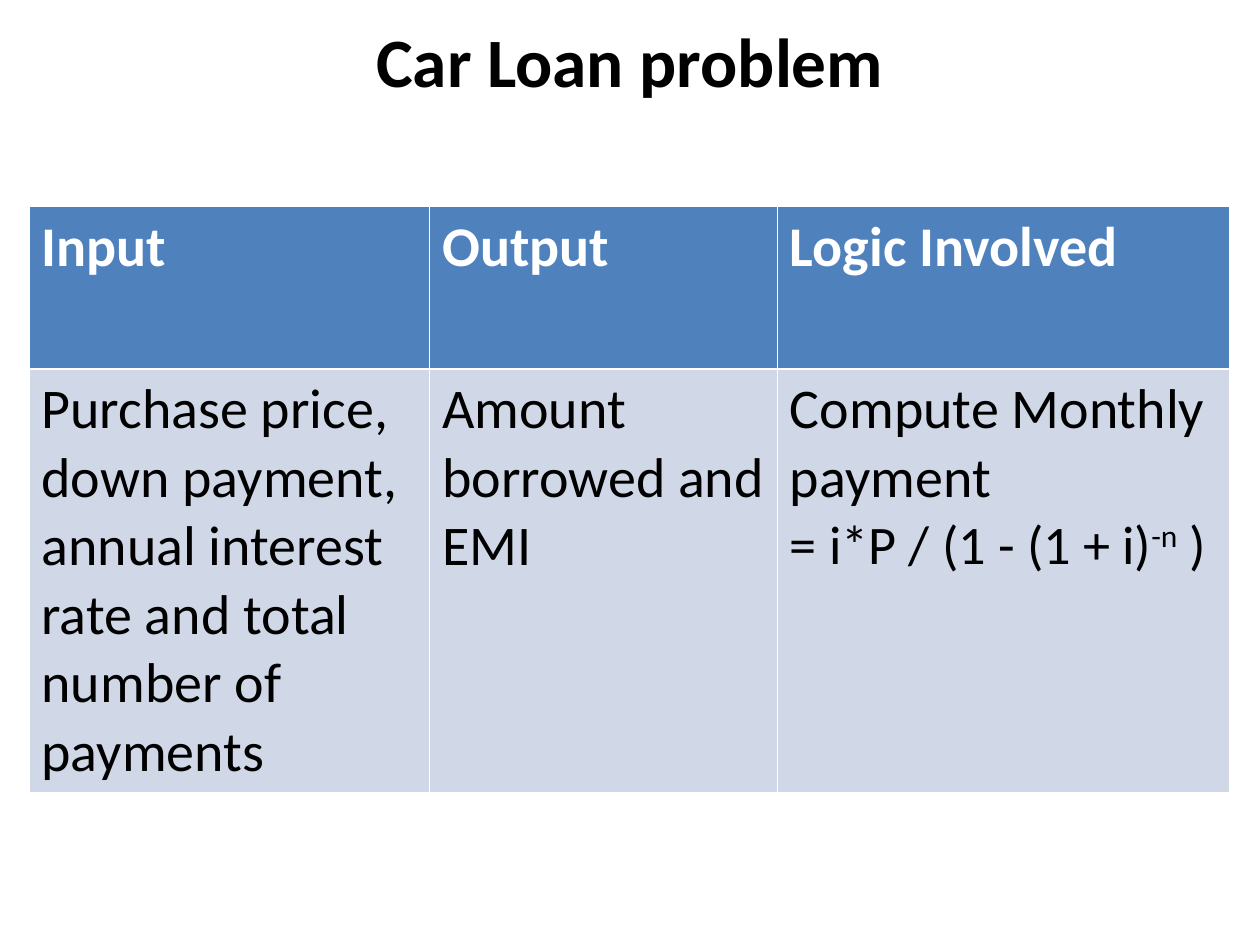
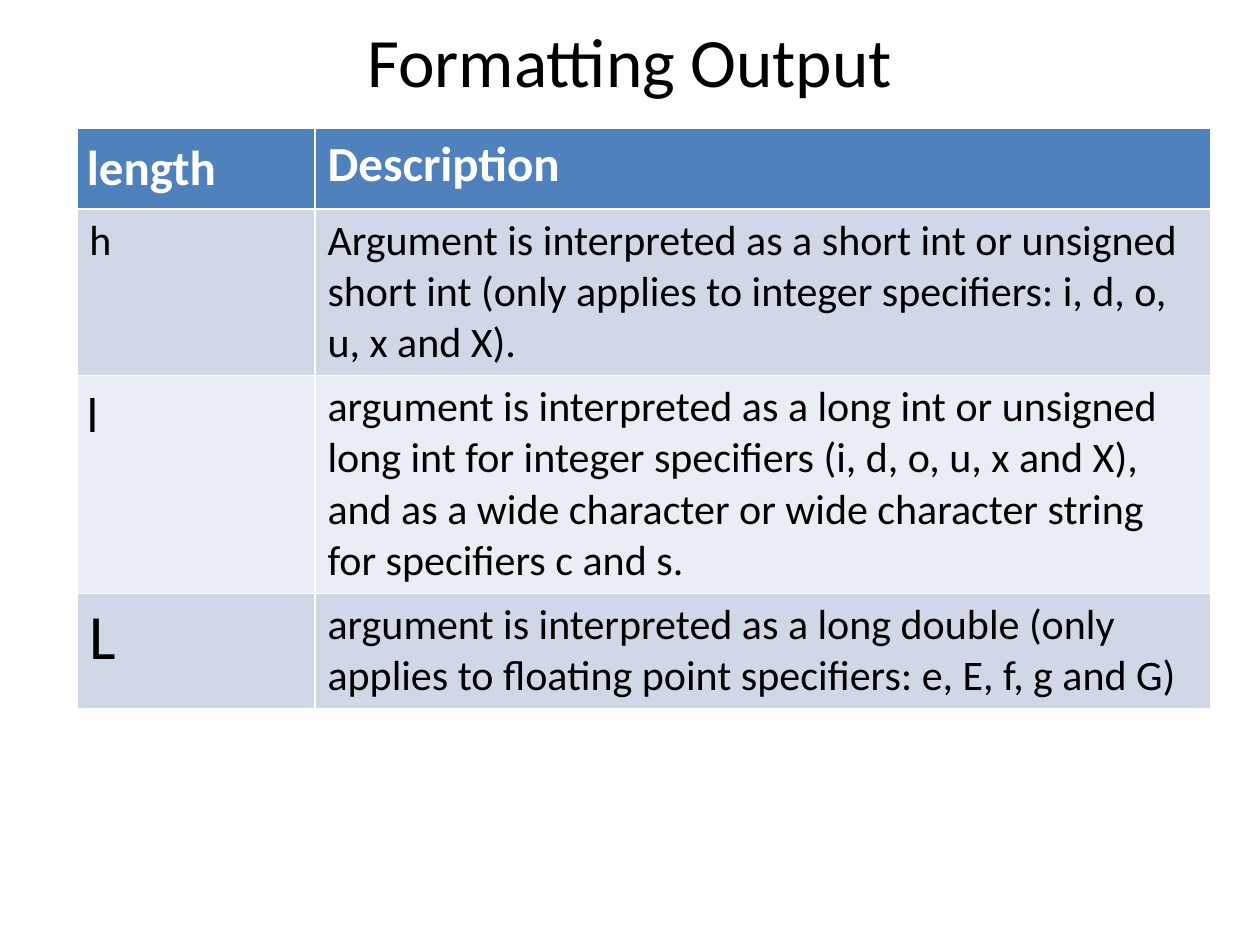
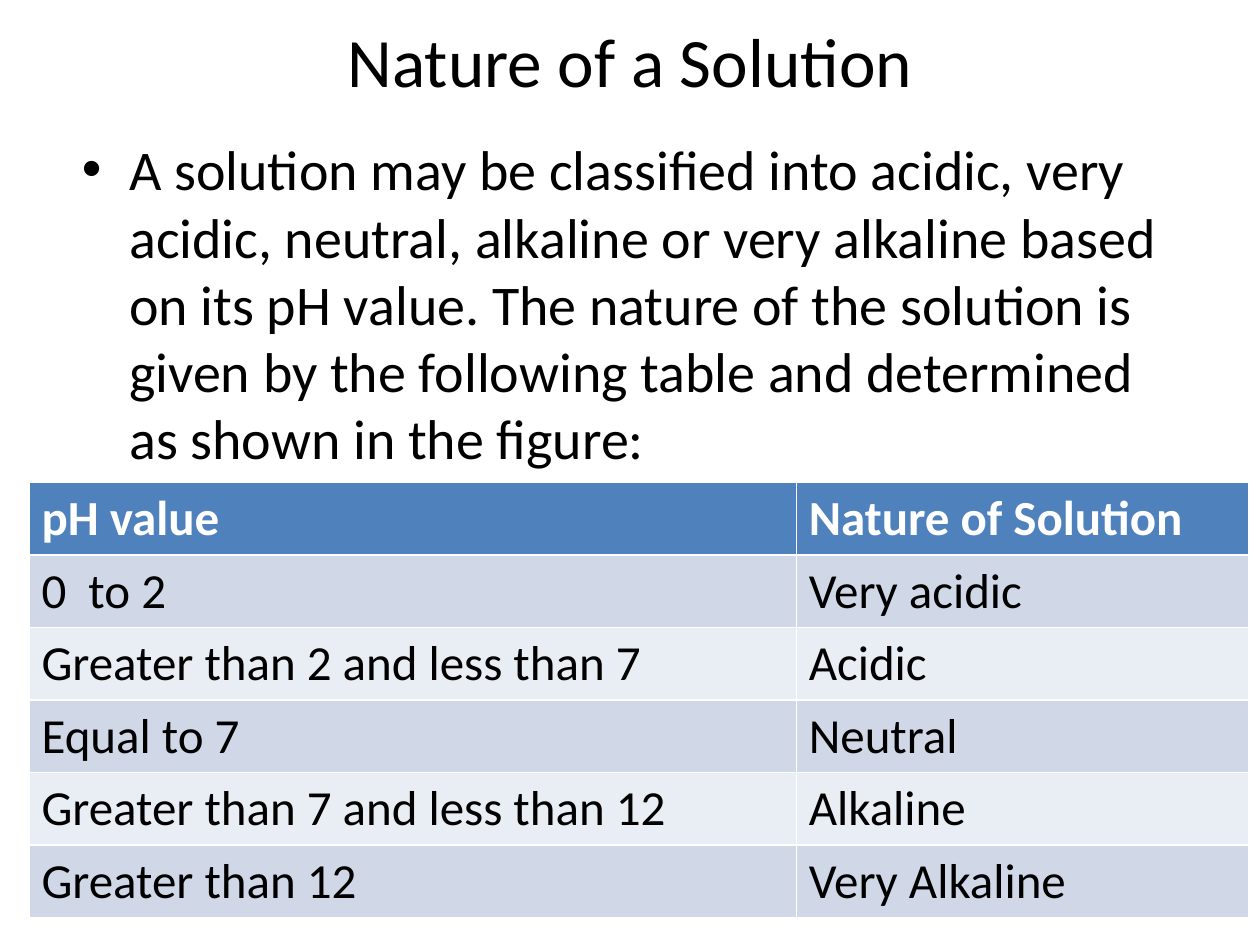
"""Build three slides of tables on loans, output formatting and pH values."""
from pptx import Presentation
from pptx import util as u
from pptx.dml.color import RGBColor
from pptx.enum import text

FONT = "Calibri"
BLACK = RGBColor(0x00, 0x00, 0x00)
WHITE = RGBColor(0xFF, 0xFF, 0xFF)
HEADER = RGBColor(0x4F, 0x81, 0xBD)
BANDS = [RGBColor(0xE9, 0xED, 0xF4), RGBColor(0xD0, 0xD8, 0xE8)]
TITLE_ONLY, TITLE_BODY = 5, 1


def add_slide(prs, layout, title, bold=False):
    s = prs.slides.add_slide(prs.slide_layouts[layout])
    sp = s.shapes.title
    sp.left, sp.top, sp.width, sp.height = map(u.Inches, (0.5, 0.08, 9, 0.79))
    tf = sp.text_frame
    tf.text = title
    tf.auto_size = text.MSO_AUTO_SIZE.NONE
    p = tf.paragraphs[0]
    p.alignment = text.PP_ALIGN.CENTER
    p.font.name, p.font.size, p.font.bold = FONT, u.Pt(39.6), bold
    p.font.color.rgb = BLACK
    return s


def add_table(s, left, top, widths, heights, rows, head_size, body_size):
    frame = s.shapes.add_table(
        len(rows), len(widths), u.Inches(left), u.Inches(top),
        u.Inches(sum(widths)), u.Inches(sum(heights)))
    table = frame.table
    for col, width in zip(table.columns, widths):
        col.width = u.Inches(width)
    for i, (values, height) in enumerate(zip(rows, heights)):
        table.rows[i].height = u.Inches(height)
        for cell, value in zip(table.rows[i].cells, values):
            cell.text = value
            cell.fill.solid()
            cell.fill.fore_color.rgb = BANDS[i % 2] if i else HEADER
            for p in cell.text_frame.paragraphs:
                p.font.name, p.font.bold = FONT, i == 0
                p.font.size = u.Pt(body_size if i else head_size)
                p.font.color.rgb = BLACK if i else WHITE
    return table


prs = Presentation()
prs.slide_width, prs.slide_height = u.Inches(10), u.Inches(7.5)

s = add_slide(prs, TITLE_ONLY, "Car Loan problem", bold=True)
loan = add_table(s, 0.23, 1.64, [3.18, 2.76, 3.59], [1.29, 3.3], [
    ("Input", "Output", "Logic Involved"),
    ("Purchase price, down payment, annual interest rate and total number of payments",
     "Amount borrowed and EMI",
     "Compute Monthly payment\n= i*P / (1 - (1 + i)"),
], 32, 32)
formula = loan.cell(1, 2).text_frame.paragraphs[1]
formula.font.size = u.Pt(31)
for part, baseline in (("-n", 30000), (" )", 0)):
    r = formula.add_run()
    r.text = part
    r._r.get_or_add_rPr().set("baseline", str(baseline))
for r in formula.runs:
    r.font.name, r.font.size = FONT, u.Pt(31)
    r.font.color.rgb = BLACK

s = add_slide(prs, TITLE_ONLY, "Formatting Output")
lengths = add_table(s, 0.61, 1.02, [1.89, 7.11], [0.64, 1.32, 1.73, 0.9], [
    ("length", "Description"),
    ("h", "Argument is interpreted as a short int or unsigned short int "
          "(only applies to integer specifiers: i, d, o, u, x and X)."),
    ("l", "argument is interpreted as a long int or unsigned long int for integer "
          "specifiers (i, d, o, u, x and X), and as a wide character or wide "
          "character string for specifiers c and s."),
    ("L", "argument is interpreted as a long double (only applies to floating "
          "point specifiers: e, E, f, g and G)"),
], 28, 24)
for row, size in ((2, 28), (3, 36)):
    lengths.cell(row, 0).text_frame.paragraphs[0].font.size = u.Pt(size)
for row in (0, 2):
    cell = lengths.cell(row, 0)
    cell.margin_left = cell.margin_right = u.Inches(0.08)
    cell.margin_top = cell.margin_bottom = u.Inches(0.08)

s = add_slide(prs, TITLE_BODY, "Nature of a Solution")
sp = s.placeholders[1]
sp.left, sp.top, sp.width, sp.height = map(u.Inches, (0.55, 1.02, 9, 2.86))
tf = sp.text_frame
tf.text = ("A solution may be classified into acidic, very acidic, neutral, alkaline "
           "or very alkaline based on its pH value. The nature of the solution is given "
           "by the following table and determined as shown in the figure:")
tf.auto_size = text.MSO_AUTO_SIZE.NONE
p = tf.paragraphs[0]
p.font.name, p.font.size = FONT, u.Pt(32)
p.font.color.rgb = BLACK
add_table(s, 0.23, 3.83, [6.09, 3.59], [0.57] * 6, [
    ("pH value", "Nature of Solution"),
    ("0  to 2", "Very acidic"),
    ("Greater than 2 and less than 7", "Acidic"),
    ("Equal to 7", "Neutral"),
    ("Greater than 7 and less than 12", "Alkaline"),
    ("Greater than 12", "Very Alkaline"),
], 28, 28)

prs.save("out.pptx")
